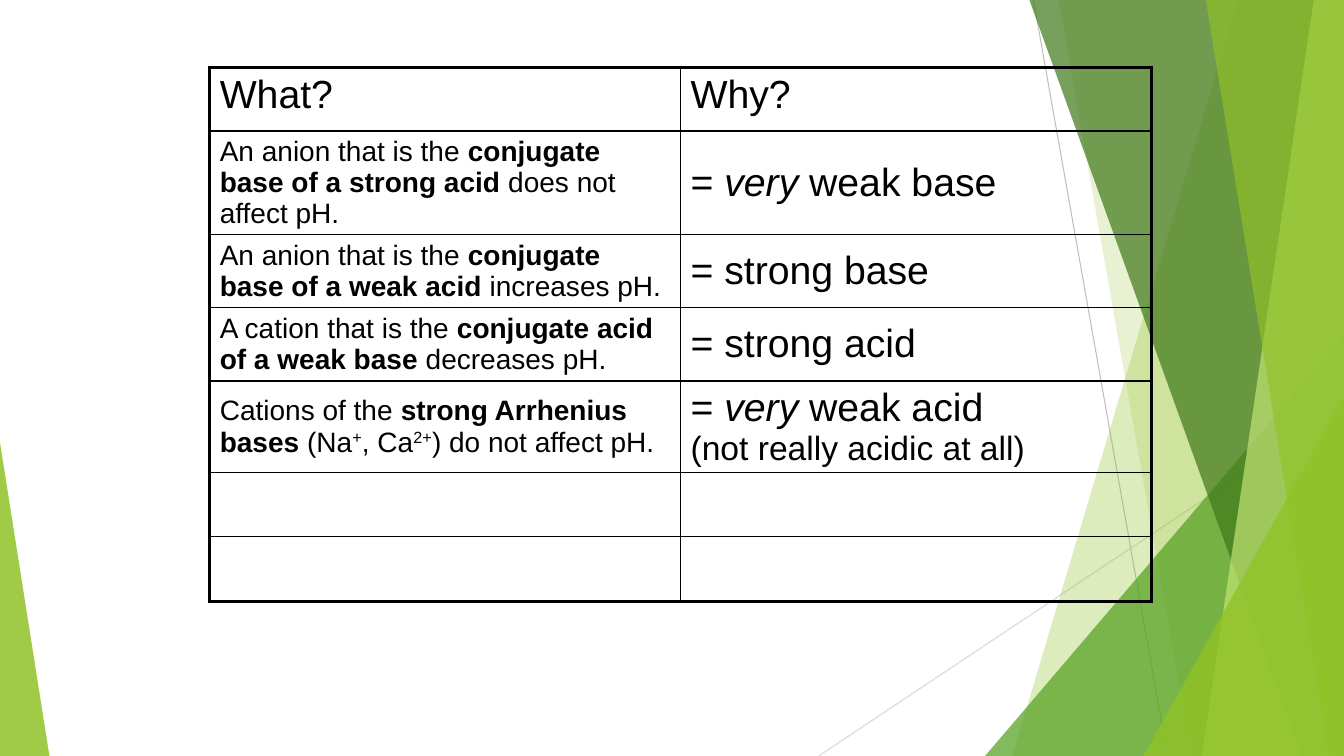
import pptx
import pptx.util
import pptx.dml.color
import pptx.enum.shapes
import pptx.enum.text
import pptx.oxml.ns
import lxml.etree

Inches = pptx.util.Inches
Pt = pptx.util.Pt
RGB = pptx.dml.color.RGBColor.from_string

THEME = {
    "font": "Arial", "text": "000000", "border": "000000",
    "leaf": "90C226", "grass": "54A021", "forest": "3F7819", "lime": "C0E474",
    "ray_dark": "BFBFBF", "ray_light": "D9D9D9",
    "heading": 28, "answer": 28, "statement": 20, "aside": 24,
    "outer": 2.25, "inner": 1, "ray": 0.75,
}
WIDTH, HEIGHT = 13.33, 7.5

RAYS = [
    ((10.25, 0), (11.58, HEIGHT), "ray_dark"),
    ((WIDTH, 4.03), (8.12, HEIGHT), "ray_light"),
]
FACETS = [
    ("band", (12.28, 10.04), "leaf", 30),
    ("band", (10.5, 11.82), "leaf", 20),
    ("triangle", (9.77, 3.33, WIDTH, 1), "grass", 72),
    ("band", (10.21, 12.91), "forest", 70),
    ("band", (13.03, 11.92), "lime", 70),
    ("band", (11.96, 13.18), "leaf", 65),
    ("triangle", (11.34, 3.93, WIDTH, 1), "leaf", 80),
    ("triangle", (0, 4.39, 0.49, 0), "leaf", 85),
]

TABLE_LEFT, TABLE_TOP, COLUMN_WIDTH = 2.08, 0.67, 4.67
ROW_HEIGHTS = [0.63, 1.03, 0.72, 0.73, 0.9, 0.64, 0.64]
BOLD, ITALIC, SUPER = {"bold": True}, {"italic": True}, {"superscript": True}
ROWS = [
    (["What?"], ["Why?"]),
    (["An anion that is the ", ("conjugate base of a strong acid", BOLD),
      " does not affect pH."],
     ["= ", ("very", ITALIC), " weak base"]),
    (["An anion that is the ", ("conjugate base of a weak acid", BOLD),
      " increases pH."],
     ["= strong base"]),
    (["A cation that is the ", ("conjugate acid of a weak base", BOLD),
      " decreases pH."],
     ["= strong acid"]),
    (["Cations of the ", ("strong Arrhenius bases", BOLD), " (Na", ("+", SUPER),
      ", Ca", ("2+", SUPER), ") do not affect pH."],
     ["= ", ("very", ITALIC), " weak acid",
      ("(not really acidic at all)", {"size": "aside", "new_line": True})]),
    ([], []),
    ([], []),
]


def add_text(p, text, size="statement", bold=False, italic=False,
             superscript=False, new_line=False):
    if new_line:
        p.add_line_break()
    r = p.add_run()
    r.text = text
    r.font.name = THEME["font"]
    r.font.size = Pt(THEME[size])
    r.font.bold = bold
    r.font.italic = italic
    r.font.color.rgb = RGB(THEME["text"])
    if superscript:
        r._r.get_or_add_rPr().set("baseline", "30000")


def add_ray(s, start, end, color):
    sp = s.shapes.add_connector(pptx.enum.shapes.MSO_CONNECTOR.STRAIGHT,
                                *[Inches(v) for v in start + end])
    sp.line.color.rgb = RGB(THEME[color])
    sp.line.width = Pt(THEME["ray"])
    lxml.etree.SubElement(sp._element.spPr, pptx.oxml.ns.qn("a:effectLst"))


def add_facet(s, kind, geometry, color, opacity):
    if kind == "band":
        top_x, bottom_x = geometry
        builder = s.shapes.build_freeform(Inches(top_x), 0)
        corners = [(WIDTH, 0), (WIDTH, HEIGHT), (bottom_x, HEIGHT)]
        builder.add_line_segments([(Inches(x), Inches(y)) for x, y in corners])
        sp = builder.convert_to_shape()
    else:
        left, top, right, apex = geometry
        sp = s.shapes.add_shape(pptx.enum.shapes.MSO_SHAPE.ISOSCELES_TRIANGLE,
                                Inches(left), Inches(top),
                                Inches(right - left), Inches(HEIGHT - top))
        sp.adjustments[0] = apex
    sp.shadow.inherit = False
    sp.line.fill.background()
    sp.fill.solid()
    sp.fill.fore_color.rgb = RGB(THEME[color])
    clr = sp._element.spPr.find(".//" + pptx.oxml.ns.qn("a:srgbClr"))
    alpha = lxml.etree.SubElement(clr, pptx.oxml.ns.qn("a:alpha"))
    alpha.set("val", str(opacity * 1000))


def set_borders(cell, outer_sides):
    tcPr = cell._tc.get_or_add_tcPr()
    for i, side in enumerate("LRTB"):
        width = THEME["outer" if side in outer_sides else "inner"]
        ln = pptx.oxml.parse_xml(
            f'<a:ln{side} {pptx.oxml.ns.nsdecls("a")} w="{int(Pt(width))}">'
            f'<a:solidFill><a:srgbClr val="{THEME["border"]}"/></a:solidFill>'
            f'</a:ln{side}>')
        tcPr.insert(i, ln)


def add_table(s):
    frame = s.shapes.add_table(len(ROWS), 2, Inches(TABLE_LEFT), Inches(TABLE_TOP),
                               Inches(2 * COLUMN_WIDTH), Inches(sum(ROW_HEIGHTS)))
    table = frame.table
    table.first_row = False
    table.horz_banding = False
    for column in table.columns:
        column.width = Inches(COLUMN_WIDTH)
    last = len(ROWS) - 1
    for i, (row, height) in enumerate(zip(ROWS, ROW_HEIGHTS)):
        table.rows[i].height = Inches(height)
        for j, parts in enumerate(row):
            cell = table.cell(i, j)
            cell.fill.background()
            if 0 < i:
                cell.vertical_anchor = pptx.enum.text.MSO_ANCHOR.MIDDLE
            size = "heading" if i == 0 else ("statement", "answer")[j]
            p = cell.text_frame.paragraphs[0]
            for part in parts:
                text, style = (part, {}) if isinstance(part, str) else part
                add_text(p, text, **{"size": size, **style})
            set_borders(cell, "LR"[j] + {0: "T", last: "B"}.get(i, ""))


def main():
    prs = pptx.Presentation()
    prs.slide_width, prs.slide_height = Inches(WIDTH), Inches(HEIGHT)
    s = prs.slides.add_slide(prs.slide_layouts[6])
    for ray in RAYS:
        add_ray(s, *ray)
    for facet in FACETS:
        add_facet(s, *facet)
    add_table(s)
    prs.save("out.pptx")


if __name__ == "__main__":
    main()
